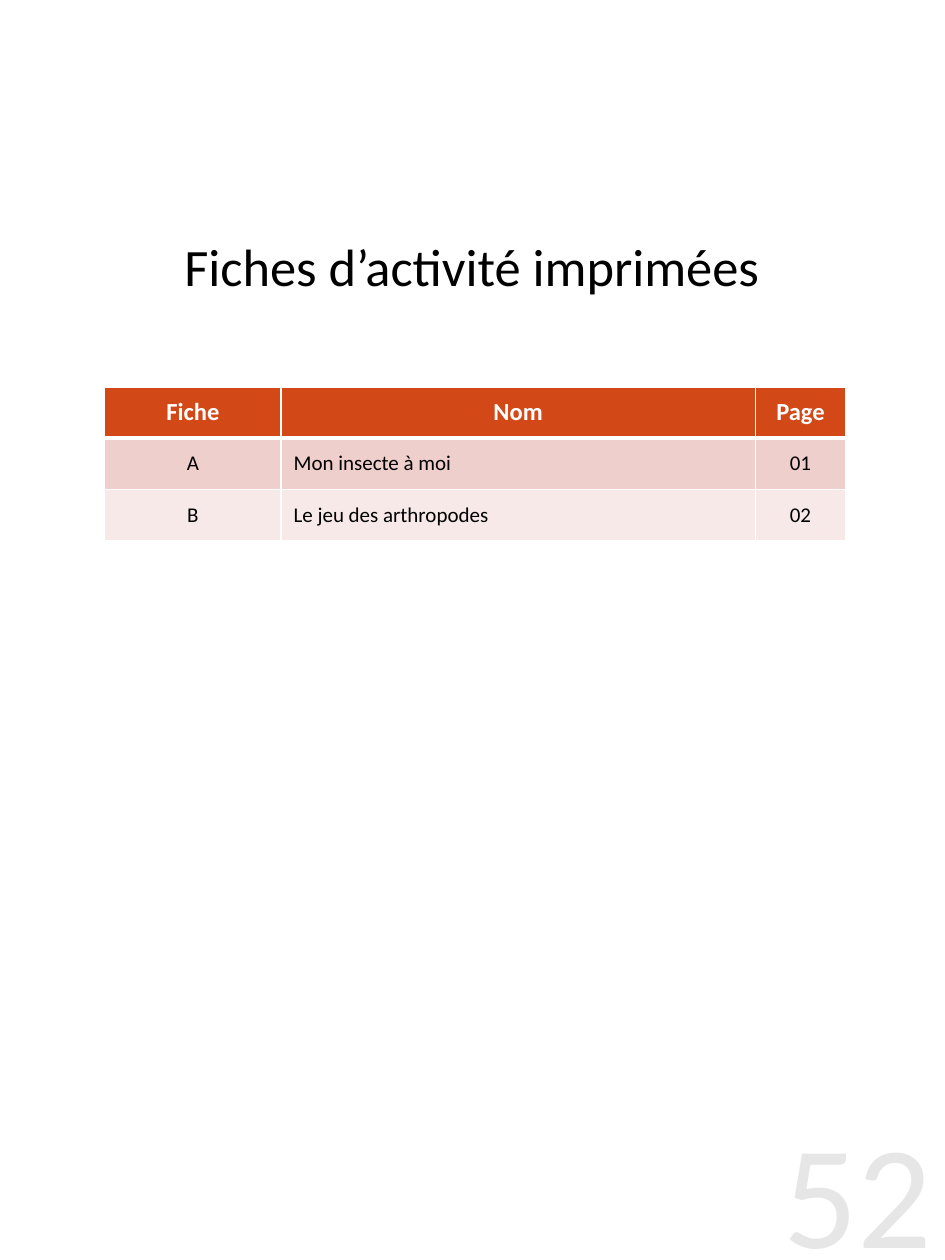
from lxml import etree
from pptx import Presentation, util as u
from pptx.dml.color import RGBColor
from pptx.enum import text as t
from pptx.oxml import ns

MID = t.PP_ALIGN.CENTER


def color(fmt, code):
    """Give a fill or font colour format the hex colour."""
    fmt.rgb = RGBColor.from_string(code)


def write(frame, words, size=12, ink="000000", bold=False, align=MID,
          anchor=t.MSO_ANCHOR.MIDDLE):
    """Put formatted words into a text frame."""
    frame.text = words
    frame.word_wrap = True
    frame.vertical_anchor = anchor
    para = frame.paragraphs[0]
    para.alignment = align
    font = para.runs[0].font
    font.name, font.size, font.bold = "Calibri", u.Pt(size), bold
    color(font.color, ink)


def paint(cell, code):
    """Fill a cell with a solid colour."""
    cell.fill.solid()
    color(cell.fill.fore_color, code)


def edge(cell, **sides):
    """Draw white cell borders with the given widths in points."""
    props = cell._tc.get_or_add_tcPr()
    for spot, (side, width) in enumerate(sides.items()):
        line = etree.Element(ns.qn(f"a:ln{side}"), w=str(u.Pt(width)))
        fill = etree.SubElement(line, ns.qn("a:solidFill"))
        etree.SubElement(fill, ns.qn("a:srgbClr"), val="FFFFFF")
        props.insert(spot, line)


def title(slide, x, y, w, h):
    """Place the slide title in its box."""
    head = slide.shapes.title
    head.left, head.top, head.width, head.height = map(u.Cm, (x, y, w, h))
    write(head.text_frame, "Fiches d’activité imprimées", size=30)


def sheets(slide, x, y, w, h):
    """Place the table of activity sheets in its box."""
    rows = [("Fiche", "Nom", "Page"),
            ("A", "Mon insecte à moi", "01"),
            ("B", "Le jeu des arthropodes", "02")]
    fills = ["D34817", "EFCFCC", "F7E9E8"]
    parts = [0.238, 0.64, 0.122]
    table = slide.shapes.add_table(
        len(rows), len(parts), *map(u.Cm, (x, y, w, h))).table
    for col, part in zip(table.columns, parts):
        col.width = u.Cm(w * part)
    for r, row in enumerate(rows):
        table.rows[r].height = u.Cm(h / len(rows))
        for c, words in enumerate(row):
            cell = table.cell(r, c)
            top = r == 0
            write(cell.text_frame, words, size=14 if top else 12,
                  ink="FFFFFF" if top else "000000", bold=top,
                  align=t.PP_ALIGN.LEFT if c == 1 and not top else MID)
            cell.vertical_anchor = t.MSO_ANCHOR.MIDDLE
            paint(cell, fills[r])
            edge(cell, L=1, R=1, T=3 if r == 1 else 1, B=3 if top else 1)


def folio(slide, x, y, w, h):
    """Place the large page number in its box."""
    frame = slide.shapes.add_textbox(*map(u.Cm, (x, y, w, h))).text_frame
    frame.margin_left = frame.margin_right = 0
    frame.margin_top = frame.margin_bottom = 0
    write(frame, "52", size=84, ink="E6E6E6", align=t.PP_ALIGN.RIGHT,
          anchor=t.MSO_ANCHOR.TOP)


def main():
    """Build and save the slide."""
    deck = Presentation()
    deck.slide_width, deck.slide_height = u.Cm(19.05), u.Cm(25.4)
    slide = deck.slides.add_slide(deck.slide_layouts[5])
    title(slide, 3.15, 4.14, 12.73, 2.41)
    sheets(slide, 2.11, 7.8, 14.94, 3.1)
    folio(slide, 14.8, 22.2, 4, 3.2)
    deck.save("out.pptx")


if __name__ == "__main__":
    main()
